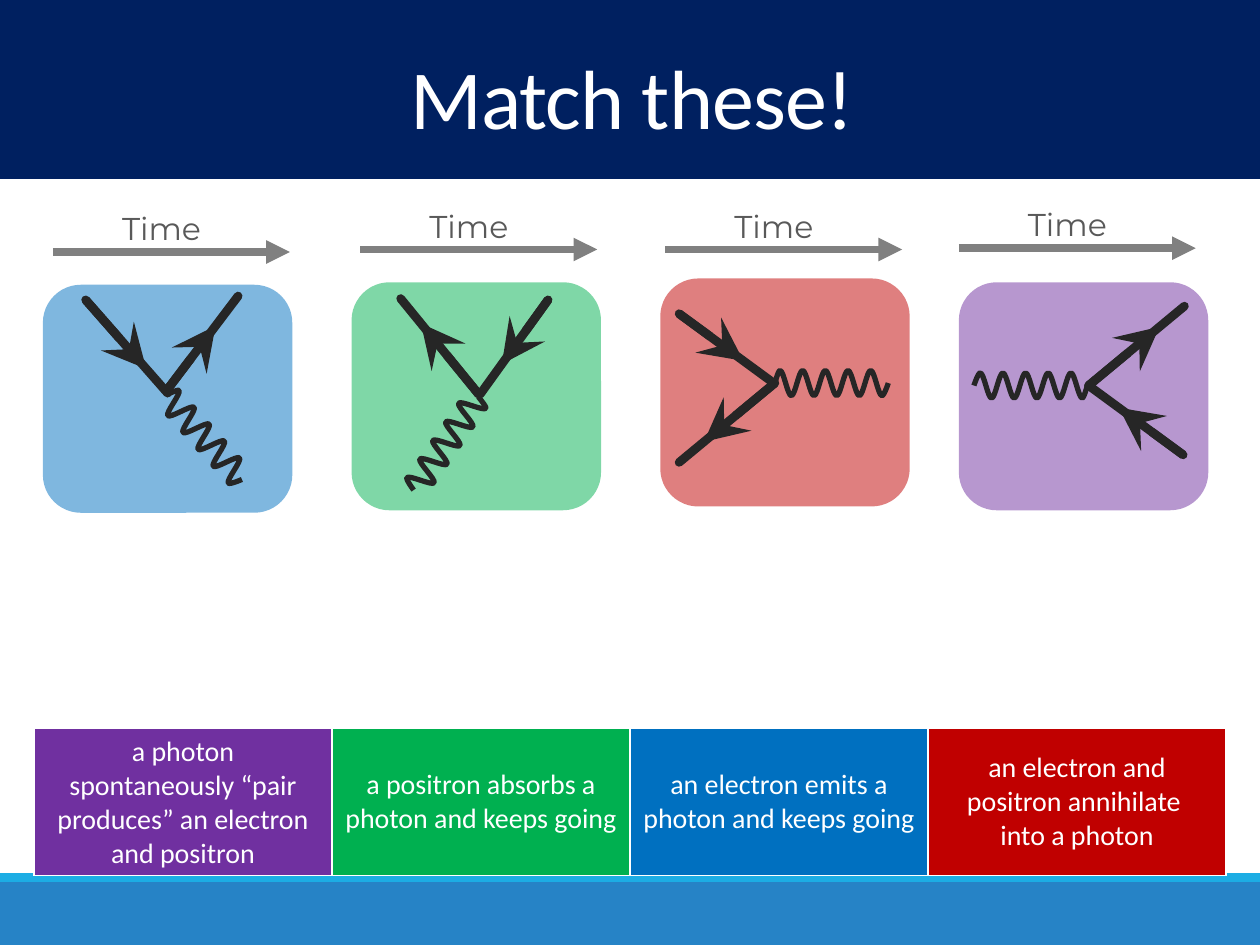
from lxml.etree import SubElement
from pptx import Presentation
from pptx.dml.color import RGBColor
from pptx.enum.shapes import MSO_CONNECTOR as Conn, MSO_SHAPE as Kind
from pptx.enum.text import MSO_ANCHOR as Anchor, MSO_AUTO_SIZE as Fit, PP_ALIGN as Align
from pptx.oxml.ns import qn
from pptx.util import Inches, Pt

HUES = {
    "navy": "002060", "base": "2683C6", "strip": "1CADE4",
    "blue": "0070C0", "green": "00B050", "red": "C00000", "purple": "7030A0",
    "white": "FFFFFF", "grey": "808080", "label": "595959", "ink": "262626",
}
CARD = (1.98, 1.81)
HEADS = (0.68, 0.74)  # how far along each leg its arrowhead sits

# Card corner, time arrow start, legs and wave (centre, turn) within the card
CARDS = [
    dict(hue="blue", at=(0.34, 2.26), time=(0.42, 2),
         legs=[((0.99, 0.83), (1.55, 0.09)), ((0.34, 0.12), (0.99, 0.86))],
         wave=(1.28, 1.21, 228.1)),
    dict(hue="green", at=(2.79, 2.24), time=(2.86, 1.98),
         legs=[((1.56, 0.14), (1.02, 0.89)), ((1.01, 0.89), (0.39, 0.13))],
         wave=(0.75, 1.28, 304.8)),
    dict(hue="red", at=(5.24, 2.21), time=(5.28, 1.98),
         legs=[((0.15, 0.28), (0.9, 0.83)), ((0.91, 0.83), (0.15, 1.46))],
         wave=(1.36, 0.83, 180)),
    dict(hue="purple", at=(7.61, 2.24), time=(7.61, 1.97),
         legs=[((1.78, 1.37), (1.03, 0.82)), ((1.03, 0.82), (1.79, 0.19))],
         wave=(0.57, 0.82, 0)),
]
ANSWERS = [
    ("purple", ["a photon spontaneously “pair produces” an electron and positron"]),
    ("green", ["a positron absorbs a photon and keeps going"]),
    ("blue", ["an electron emits a photon and keeps going"]),
    ("red", ["an electron and positron annihilate ", "into a photon"]),
]


def rgb(hue):
    return RGBColor.from_string(HUES[hue])


def add_run(para, text, size, hue, face="Calibri"):
    run = para.add_run()
    run.text = text
    run.font.size = Pt(size)
    run.font.name = face
    run.font.color.rgb = rgb(hue)
    return run


def add_block(shapes, kind, box, hue):
    block = shapes.add_shape(kind, *map(Inches, box))
    block.shadow.inherit = False
    block.fill.solid()
    block.fill.fore_color.rgb = rgb(hue)
    block.line.fill.background()
    return block


def add_line(shapes, start, end, hue, width, head=None, size="med"):
    line = shapes.add_connector(Conn.STRAIGHT, *map(Inches, (*start, *end)))
    line.line.color.rgb = rgb(hue)
    line.line.width = Pt(width)
    SubElement(line._element.spPr, qn("a:effectLst"))
    if head:
        SubElement(line.line._get_or_add_ln(), qn("a:tailEnd"),
                   type=head, w=size, len=size)
    return line


def bend(shape):
    """Turn straight steps into curves that lie flat at crests and troughs."""
    route = next(shape._element.iter(qn("a:path")))
    dots = [(int(dot.get("x")), int(dot.get("y"))) for dot in route.iter(qn("a:pt"))]
    for step in route.findall(qn("a:lnTo")):
        route.remove(step)
    last = len(dots) - 1
    for i in range(last):
        (x1, y1), (x2, y2) = dots[i], dots[i + 1]
        pull = (x2 - x1) // 3
        near = (x1 + (pull if i else 0), y1)
        far = (x2 - (pull if i + 1 < last else 0), y2)
        curve = SubElement(route, qn("a:cubicBezTo"))
        for x, y in (near, far, (x2, y2)):
            SubElement(curve, qn("a:pt"), x=str(x), y=str(y))


def add_wave(shapes, x, y, turn):
    """Five periods centred on (x, y)."""
    wide, high = 0.9, 0.1
    left = x - wide / 2
    dots = [(left + 0.05 + 0.09 * i, y + (high if i % 2 else -high))
            for i in range(10)]
    dots.append((left + wide, y))
    path = shapes.build_freeform(Inches(left), Inches(y))
    path.add_line_segments([(Inches(a), Inches(b)) for a, b in dots], close=False)
    wave = path.convert_to_shape()
    bend(wave)
    wave.shadow.inherit = False
    wave.fill.background()
    wave.line.color.rgb = rgb("ink")
    wave.line.width = Pt(3)
    wave.rotation = turn


def add_time(shapes, x, y):
    add_line(shapes, (x, y), (x + 1.88, y), "grey", 4.5, "triangle")
    note = shapes.add_textbox(*map(Inches, (x + 0.45, y - 0.39, 1.11, 0.4)))
    note.text_frame.word_wrap = True
    add_run(note.text_frame.paragraphs[0], "Time", 18, "label", "Montserrat")


def add_card(shapes, hue, at, time, legs, wave):
    left, top = at
    block = add_block(shapes, Kind.ROUNDED_RECTANGLE, (*at, *CARD), hue)
    tint = block._element.spPr.find(qn("a:solidFill"))[0]
    SubElement(tint, qn("a:alpha"), val="50000")
    add_time(shapes, *time)

    # Diagram: two legs with arrowheads, and a photon
    parts = shapes.add_group_shape().shapes
    for (start, end), part in zip(legs, HEADS):
        x1, y1 = left + start[0], top + start[1]
        x2, y2 = left + end[0], top + end[1]
        mid = (x1 + part * (x2 - x1), y1 + part * (y2 - y1))
        leg = add_line(parts, (x1, y1), (x2, y2), "ink", 5)
        leg.line._get_or_add_ln().set("cap", "rnd")
        add_line(parts, (x1, y1), mid, "ink", 5, "stealth", "lg")
    x, y, turn = wave
    add_wave(parts, left + x, top + y, turn)


def add_header(slide, box):
    add_block(slide.shapes, Kind.RECTANGLE, box, "navy")
    title = slide.shapes.title
    title.left, title.top, title.width, title.height = map(
        Inches, (box[0] + 0.03, box[1] + 0.42, box[2] - 0.03, 0.84))
    slide.shapes._spTree.append(title._element)  # in front of the band
    frame = title.text_frame
    frame.auto_size = Fit.NONE
    frame.vertical_anchor = Anchor.BOTTOM
    frame.margin_bottom = Inches(0.1)
    para = frame.paragraphs[0]
    para.alignment = Align.CENTER
    para.line_spacing = 0.85
    run = add_run(para, "Match these!", 48, "white")
    run.font._element.set("spc", "-50")


def add_footer(shapes):
    add_block(shapes, Kind.RECTANGLE, (0, 7, 10, 0.5), "base")
    add_block(shapes, Kind.RECTANGLE, (0, 6.93, 10, 0.07), "strip")


def add_edges(cell):
    props = cell._tc.get_or_add_tcPr()
    for i, side in enumerate("LRTB"):
        edge = SubElement(props, qn(f"a:ln{side}"), w=str(Pt(1)))
        fill = SubElement(edge, qn("a:solidFill"))
        SubElement(fill, qn("a:srgbClr"), val=HUES["white"])
        props.insert(i, edge)


def add_answers(shapes, box):
    table = shapes.add_table(1, len(ANSWERS), *map(Inches, box)).table
    table.first_row = table.horz_banding = False
    for i, (hue, lines) in enumerate(ANSWERS):
        table.columns[i].width = Inches(box[2] / len(ANSWERS))
        cell = table.cell(0, i)
        cell.fill.solid()
        cell.fill.fore_color.rgb = rgb(hue)
        cell.vertical_anchor = Anchor.MIDDLE
        add_edges(cell)
        frame = cell.text_frame
        for j, text in enumerate(lines):
            para = frame.add_paragraph() if j else frame.paragraphs[0]
            para.alignment = Align.CENTER
            add_run(para, text, 16, "white")


def main():
    deck = Presentation()
    deck.slide_width, deck.slide_height = Inches(10), Inches(7.5)
    slide = deck.slides.add_slide(deck.slide_layouts[5])
    add_footer(slide.shapes)
    add_header(slide, (0, 0, 10, 1.42))
    for card in CARDS:
        add_card(slide.shapes, **card)
    add_answers(slide.shapes, (0.27, 5.78, 9.46, 0.97))
    deck.save("out.pptx")


if __name__ == "__main__":
    main()
